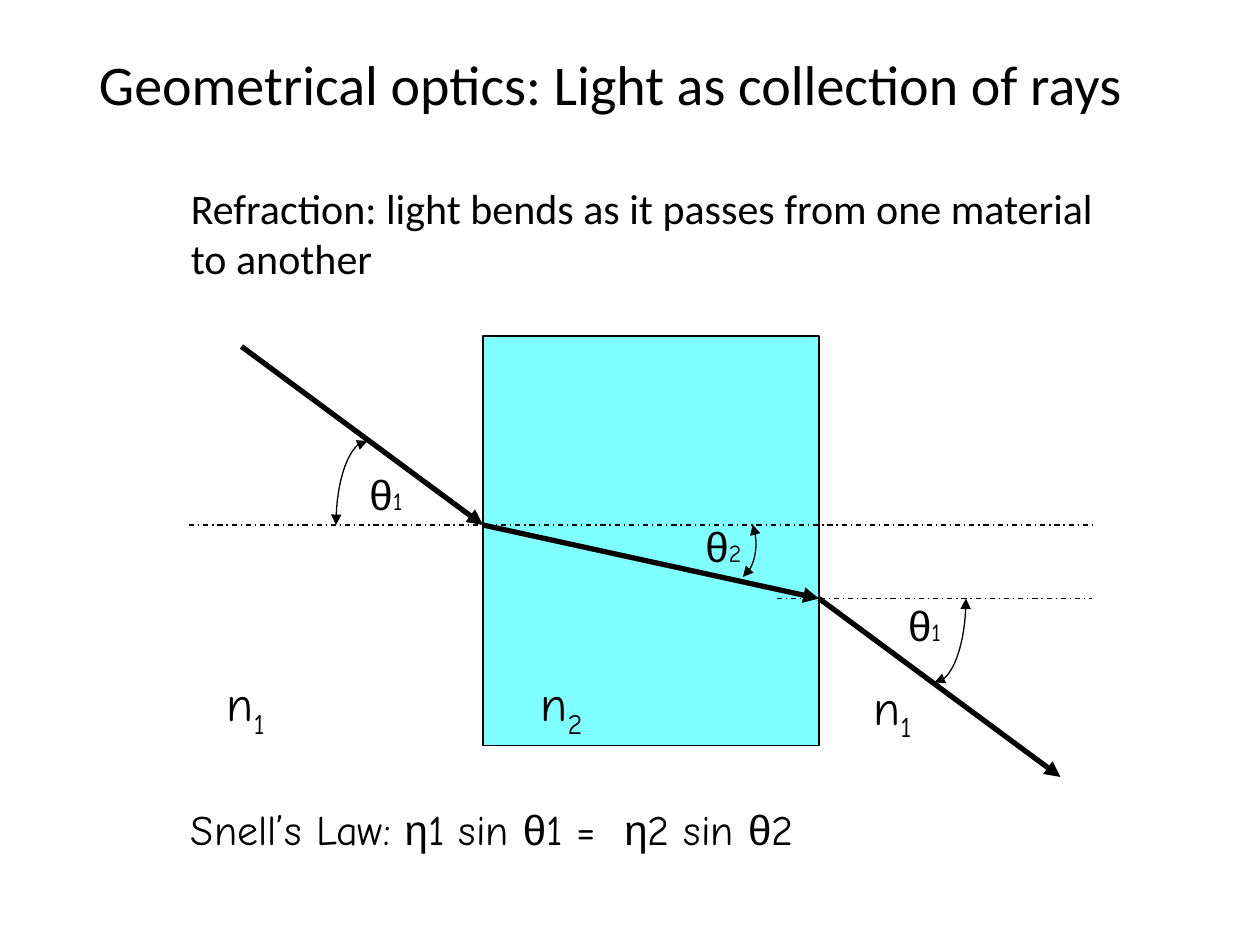
from dataclasses import dataclass
from math import cos, radians, sin

from lxml import etree
from pptx import Presentation
from pptx.dml.color import RGBColor
from pptx.enum.dml import MSO_LINE
from pptx.enum.shapes import MSO_CONNECTOR, MSO_SHAPE
from pptx.enum.text import MSO_AUTO_SIZE
from pptx.oxml.ns import qn
from pptx.util import Inches, Pt

STRAIGHT = MSO_CONNECTOR.STRAIGHT
RECTANGLE = MSO_SHAPE.RECTANGLE
DASH_DOT = MSO_LINE.DASH_DOT
FIT_SHAPE = MSO_AUTO_SIZE.SHAPE_TO_FIT_TEXT


@dataclass(frozen=True)
class Theme:
    ink: RGBColor = RGBColor(0x00, 0x00, 0x00)
    glass: RGBColor = RGBColor(0x00, 0xFF, 0xFF)
    glass_alpha: int = 50
    sans: str = "Calibri"
    hand: str = "Comic Neue"
    greek: str = "Arial"
    title: int = 32
    body: int = 24
    index: int = 28
    small: int = 14
    thin: float = 0.75
    thick: float = 3


THEME = Theme()
COLS, ROWS = 120, 90  # grid of the 10 x 7.5 inch slide


def grid(n):
    """Length of n grid steps (12 to the inch)."""
    return Inches(n / 12)


def add_text(s, box, runs, wrap=True):
    """Text box in grid steps; each run is (text, font, size, baseline)."""
    tb = s.shapes.add_textbox(*map(grid, box))
    tf = tb.text_frame
    tf.word_wrap = wrap
    if not wrap:
        tf.auto_size = FIT_SHAPE
    p = tf.paragraphs[0]
    for text, font, size, baseline in runs:
        r = p.add_run()
        r.text = text
        r.font.name, r.font.size = font, Pt(size)
        r.font.color.rgb = THEME.ink
        if baseline:
            r._r.get_or_add_rPr().set("baseline", str(baseline * 1000))
    return p


def style_line(shape, width, ends=()):
    """Ink outline; ends holds headEnd and/or tailEnd for arrowheads."""
    shape.line.color.rgb = THEME.ink
    shape.line.width = Pt(width)
    ln = shape.line._get_or_add_ln()
    for end in ends:
        etree.SubElement(ln, qn(f"a:{end}"), type="triangle")


def add_line(s, start, end, width, arrow=False, dashed=False):
    c = s.shapes.add_connector(STRAIGHT, *map(grid, (*start, *end)))
    if dashed:
        c.line.dash_style = DASH_DOT
    style_line(c, width, ["tailEnd"] if arrow else [])
    etree.SubElement(c._element.spPr, qn("a:effectLst"))


def add_angle_arc(s, center, radii, first, last, steps=16):
    """Elliptic arc with an arrowhead at both ends."""
    angles = [radians(first + (last - first) * i / steps) for i in range(steps + 1)]
    points = [(grid(center[0] + radii[0] * cos(a)),
               grid(center[1] + radii[1] * sin(a))) for a in angles]
    fb = s.shapes.build_freeform(*points[0])
    fb.add_line_segments(points[1:], close=False)
    arc = fb.convert_to_shape()
    arc.shadow.inherit = False
    arc.fill.background()
    style_line(arc, THEME.thin, ["headEnd", "tailEnd"])


def draw_heading(s, box):
    p = add_text(s, box, [("Geometrical optics: Light as collection of rays",
                           THEME.sans, THEME.title, 0)])
    p.line_spacing = 0.9


def draw_statement(s, box):
    add_text(s, box, [("Refraction: light bends as it passes from one material to another",
                       THEME.sans, THEME.body, 0)])


def draw_diagram(s, box):
    left, top, width, _ = box

    def at(x, y):
        return left + x, top + y

    # Pane of the second material
    pane = s.shapes.add_shape(RECTANGLE, *map(grid, (*at(28, 0), 32, 39)))
    pane.shadow.inherit = False
    pane.fill.solid()
    pane.fill.fore_color.rgb = THEME.glass
    color = pane.fill._xPr.find(qn("a:solidFill"))[0]
    etree.SubElement(color, qn("a:alpha"), val=str(THEME.glass_alpha * 1000))
    style_line(pane, THEME.thin)

    # Surface normals
    for x, y in ((0, 18), (56, 25)):
        add_line(s, at(x, y), at(width, y), THEME.thin, dashed=True)

    # Light ray, bending at both surfaces
    ray = [at(5, 1), at(28, 18), at(60, 25), at(83, 42)]
    for start, end in zip(ray, ray[1:]):
        add_line(s, start, end, THEME.thick, arrow=True)

    # Angle arcs: incoming, inside, outgoing
    for center, radii, first, last in (((17, 18), (3, 8), 270, 180),
                                       ((52, 19.8), (2, 3.4), -33, 68),
                                       ((71, 25), (3, 8), 90, 0)):
        add_angle_arc(s, at(*center), radii, first, last)

    # Angle labels; the digit 2 is wider than 1
    for x, y, w, number in ((16, 12, 5.7, "1"), (48, 17, 6.2, "2"),
                            (67.3, 24.5, 5.7, "1")):
        add_text(s, (*at(x, y), w, 6),
                 [("θ", THEME.greek, THEME.body, 0),
                  (number, THEME.hand, THEME.small, 0)], wrap=False)

    # Refractive index labels
    for x, y, w, number in ((2.4, 31.5, 6.3, "1"), (32.3, 31.5, 7, "2"),
                            (64, 31.8, 6.3, "1")):
        add_text(s, (*at(x, y), w, 6.8),
                 [("n", THEME.hand, THEME.index, 0),
                  (number, THEME.hand, THEME.index, -25)], wrap=False)


def draw_law(s, box):
    parts = ("Snell’s Law: ", "η", "1 sin ", "θ", "1 =  ", "η", "2 sin ", "θ", "2")
    add_text(s, box, [(text, THEME.greek if text in "ηθ" else THEME.hand, THEME.body, 0)
                      for text in parts])


def main():
    prs = Presentation()
    prs.slide_width, prs.slide_height = grid(COLS), grid(ROWS)
    s = prs.slides.add_slide(prs.slide_layouts[6])
    draw_diagram(s, (18, 32, 86, 42))
    draw_statement(s, (17, 16.8, 90, 11))
    draw_law(s, (17, 75.9, 90, 6))
    draw_heading(s, (8.25, 4.8, 103.5, 8))
    prs.save("out.pptx")


if __name__ == "__main__":
    main()
